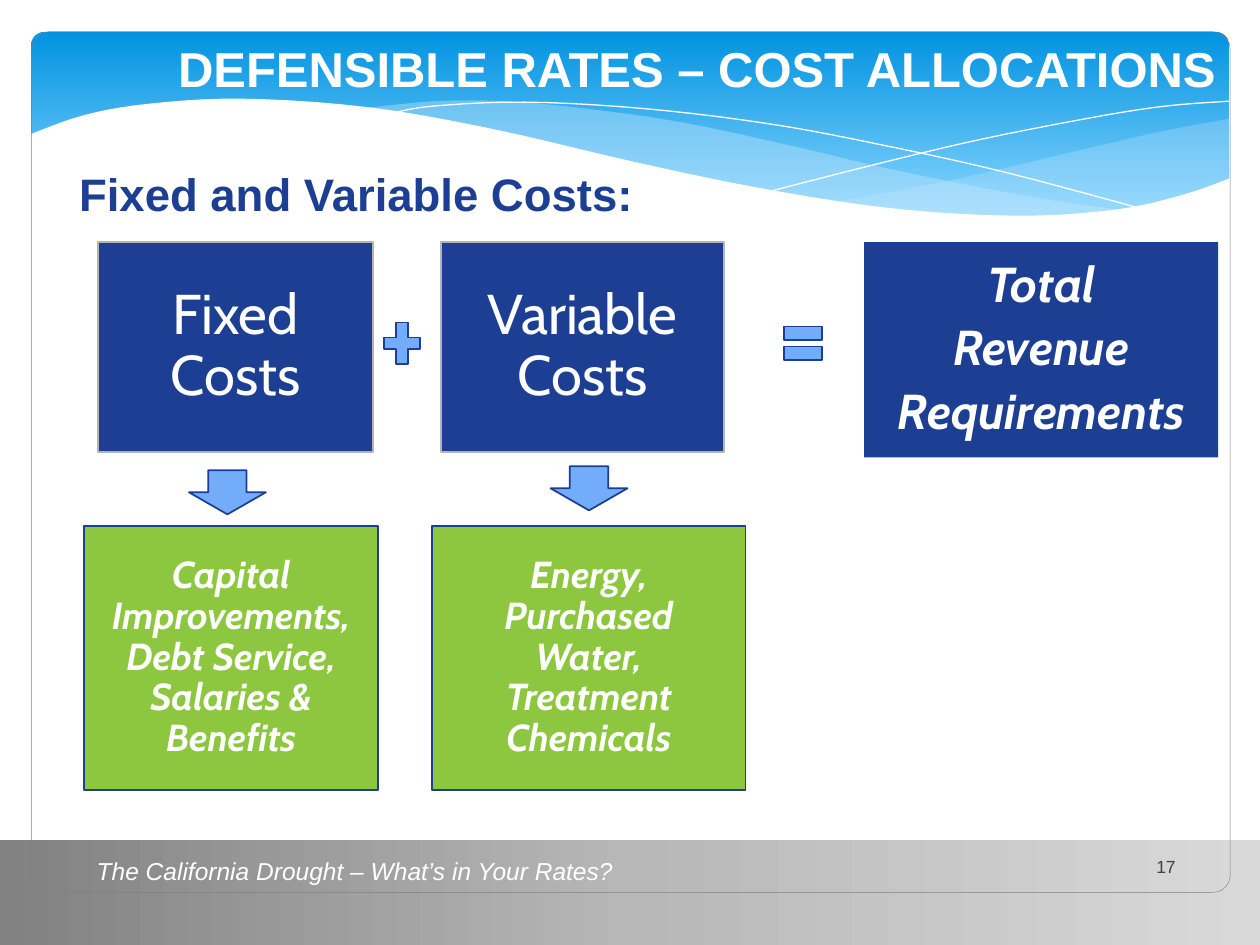
from lxml import etree
from pptx import Presentation
from pptx import util as u
from pptx.dml.color import RGBColor
from pptx.enum import shapes, text
from pptx.oxml import ns

WHITE = RGBColor(0xFF, 0xFF, 0xFF)
NAVY = RGBColor(0x1C, 0x3F, 0x94)
GREEN = RGBColor(0x8D, 0xC7, 0x3F)
SKY = RGBColor(0x73, 0xAC, 0xF8)
MIST = RGBColor(0xC6, 0xE7, 0xFC)
SILVER = RGBColor(0xB4, 0xB4, 0xB4)
GRAY = RGBColor(0x80, 0x80, 0x80)
CHARCOAL = RGBColor(0x40, 0x40, 0x40)
HEADER_STOPS = [(0, RGBColor(0x02, 0x93, 0xE0)), (90, RGBColor(0x83, 0xD3, 0xFE))]
FOOTER_STOPS = [(0, RGBColor(0x81, 0x81, 0x81)), (50, RGBColor(0xB7, 0xB7, 0xB7)),
                (100, RGBColor(0xD9, 0xD9, 0xD9))]

CREST = [(0, 2.08), (1.12, 1.68), (2.44, 1.45), (4.32, 1.35), (6.83, 1.52), (9.35, 1.96),
         (12.19, 2.62), (14.73, 3.15), (17.4, 3.56), (19.96, 3.71), (21.95, 3.58),
         (23.29, 3.28), (24.23, 2.95)]
RIGHT_RIBBON = [
    [(16.23, 3.43), (18.57, 3), (21.31, 2.36), (22.83, 2.01), (24.23, 1.75)],
    [(24.23, 2.97), (23.01, 3.38), (21.59, 3.66), (19.84, 3.73), (18.03, 3.66), (16.23, 3.43)]]
LONG_RIBBON = [
    [(6.71, 1.55), (8.18, 1.4), (9.58, 1.4), (11.23, 1.55), (13.18, 1.83), (15.42, 2.31),
     (17.37, 2.77), (19.94, 3.28), (22.12, 3.61)],
    [(22.12, 3.61), (20.73, 3.76), (19.08, 3.73), (17.09, 3.56), (14.71, 3.18),
     (11.89, 2.57), (9.7, 2.06), (8.13, 1.75), (6.71, 1.55)]]
FALLING_LINE = [(7.29, 1.65), (8.15, 1.5), (10.01, 1.42), (12.4, 1.55), (14.88, 1.85),
                (17.09, 2.26), (19.63, 2.82), (22.48, 3.58)]
RISING_LINE = [(15.01, 3.2), (17.09, 2.67), (19.15, 2.18), (21.44, 1.73), (22.91, 1.5),
               (24.21, 1.4)]


def inside(box, left, top, width, height):
    return box[0] + left, box[1] + top, width, height


def lengths(box):
    return [u.Cm(value) for value in box]


def smooth(points, steps=5):
    padded = [points[0], *points, points[-1]]
    curve = []
    for a, b, c, d in zip(padded, padded[1:], padded[2:], padded[3:]):
        for step in range(steps):
            t = step / steps
            curve.append(tuple(
                (2 * q + (r - p) * t + (2 * p - 5 * q + 4 * r - s) * t ** 2
                 + (3 * q - p - 3 * r + s) * t ** 3) / 2
                for p, q, r, s in zip(a, b, c, d)))
    return curve + [points[-1]]


def paint(shape, fill=None, line=None, width=1):
    shape.shadow.inherit = False
    if fill is None:
        shape.fill.background()
    else:
        shape.fill.solid()
        shape.fill.fore_color.rgb = fill
    if line is None:
        shape.line.fill.background()
    else:
        shape.line.color.rgb = line
        shape.line.width = u.Pt(width)


def paint_gradient(shape, stops, angle):
    paint(shape)
    shape.fill.gradient()
    shape.fill.gradient_angle = angle
    stop_list = shape.element.find(".//" + ns.qn("a:gsLst"))
    stop_list.clear()
    for position, color in stops:
        stop = etree.SubElement(stop_list, ns.qn("a:gs"), pos=str(position * 1000))
        etree.SubElement(stop, ns.qn("a:srgbClr"), val=str(color))


def add_shape(page, kind, box, fill=None, line=None, width=1):
    shape = page.shapes.add_shape(kind, *lengths(box))
    paint(shape, fill, line, width)
    return shape


def add_outline(page, box, points, closed=True):
    corners = [(u.Cm(box[0] + x), u.Cm(box[1] + y)) for x, y in points]
    builder = page.shapes.build_freeform(*corners[0])
    builder.add_line_segments(corners[1:], close=closed)
    return builder.convert_to_shape()


def add_span(para, words, size, color, font="Arial", bold=False, italic=False):
    span = para.add_run()
    span.text = words
    span.font.name = font
    span.font.size = u.Pt(size)
    span.font.color.rgb = color
    span.font.bold = bold
    span.font.italic = italic


def add_label(page, box, words, size, color, italic=False):
    label = page.shapes.add_textbox(*lengths(box))
    label.text_frame.word_wrap = True
    add_span(label.text_frame.paragraphs[0], words, size, color, italic=italic)


def fill_placeholder(holder, box, words, size, color, anchor, align):
    holder.left, holder.top, holder.width, holder.height = lengths(box)
    frame = holder.text_frame
    frame.auto_size = text.MSO_AUTO_SIZE.NONE
    frame.vertical_anchor = anchor
    para = frame.paragraphs[0]
    para.alignment = align
    para.space_before = u.Pt(0)
    add_span(para, words, size, color, bold=True)
    holder.element.getparent().append(holder.element)
    return para


def draw_header(page, box):
    banner = add_shape(page, shapes.MSO_SHAPE.ROUNDED_RECTANGLE, inside(box, 0.05, 0, 24.15, 3.96))
    banner.adjustments[0] = 0.07
    paint_gradient(banner, HEADER_STOPS, 270)
    for (upper, lower), opacity in ((RIGHT_RIBBON, 29), (LONG_RIBBON, 40)):
        ribbon = add_outline(page, box, smooth(upper) + smooth(lower))
        paint(ribbon, MIST)
        color = ribbon.element.spPr.find(".//" + ns.qn("a:srgbClr"))
        etree.SubElement(color, ns.qn("a:alpha"), val=str(opacity * 1000))
    for points in (FALLING_LINE, RISING_LINE):
        paint(add_outline(page, box, smooth(points), closed=False), line=WHITE, width=0)
    wave = add_outline(page, box, smooth(CREST) + [(box[2], box[3]), (0, box[3])])
    paint(wave, WHITE)


def draw_footer(page, box):
    bar = add_shape(page, shapes.MSO_SHAPE.RECTANGLE, box)
    paint_gradient(bar, FOOTER_STOPS, 0)
    add_label(page, inside(box, 23.06, 0.2, 1.27, 0.69), "17", 10, CHARCOAL)
    add_label(page, inside(box, 1.7, 0.2, 11.63, 0.86),
              "The California Drought – What’s in Your Rates?", 14, WHITE, italic=True)


def draw_frame(page, box):
    frame = add_shape(page, shapes.MSO_SHAPE.ROUNDED_RECTANGLE, box, line=GRAY, width=0.25)
    frame.adjustments[0] = 0.02


def draw_card(page, box, lines, size, fill, line, inset, emphasis, width=1):
    card = add_shape(page, shapes.MSO_SHAPE.RECTANGLE, box, fill, line, width)
    frame = card.text_frame
    frame.word_wrap = True
    frame.vertical_anchor = text.MSO_ANCHOR.MIDDLE
    frame.margin_left = frame.margin_right = u.Cm(inset)
    frame.margin_top = frame.margin_bottom = u.Cm(inset)
    for index, words in enumerate(lines):
        para = frame.add_paragraph() if index else frame.paragraphs[0]
        para.alignment = text.PP_ALIGN.CENTER
        para.line_spacing = 0.9
        para.space_after = u.Pt(6)
        add_span(para, words, size, WHITE, "Cabin", emphasis, emphasis)


def draw_equation(page, box):
    draw_card(page, inside(box, 15.72, 0, 7.14, 4.34), ["Total", "Revenue", "Requirements"],
              28, NAVY, None, 0.3, True)
    for left, width, words in ((0.28, 5.54, "Fixed Costs"), (7.19, 5.71, "Variable Costs")):
        draw_card(page, inside(box, left, 0, width, 4.23), [words],
                  32, NAVY, SILVER, 0.46, False, 1.25)
    for left, width, words in (
            (0, 5.92, "Capital Improvements, Debt Service, Salaries & Benefits"),
            (7.01, 6.32, "Energy, Purchased Water, Treatment Chemicals")):
        draw_card(page, inside(box, left, 5.72, width, 5.33), [words],
                  21.5, GREEN, NAVY, 0.51, True)
    for kind, *place in (
            (shapes.MSO_SHAPE.MATH_PLUS, 5.92, 1.47, 0.97, 1.14),
            (shapes.MSO_SHAPE.MATH_EQUAL, 13.97, 1.47, 1.04, 1.14),
            (shapes.MSO_SHAPE.DOWN_ARROW, 2.11, 4.6, 1.55, 0.89),
            (shapes.MSO_SHAPE.DOWN_ARROW, 9.4, 4.52, 1.55, 0.89)):
        add_shape(page, kind, inside(box, *place), SKY, NAVY)


def write_headings(page, box):
    fill_placeholder(page.shapes.title, inside(box, 0.89, 0, 23.29, 1.45),
                     "DEFENSIBLE RATES – COST ALLOCATIONS", 28, WHITE,
                     text.MSO_ANCHOR.BOTTOM, text.PP_ALIGN.RIGHT)
    para = fill_placeholder(page.placeholders[1], inside(box, 0.26, 2.48, 23.42, 1.57),
                            "Fixed and Variable Costs:", 26, NAVY,
                            text.MSO_ANCHOR.MIDDLE, text.PP_ALIGN.LEFT)
    layout = para._p.get_or_add_pPr()
    layout.set("marL", str(u.Cm(0.5)))
    layout.set("indent", "0")
    etree.SubElement(layout, ns.qn("a:buNone"))


def main():
    deck = Presentation()
    deck.slide_width, deck.slide_height = u.Cm(25.4), u.Cm(19.05)
    page = deck.slides.add_slide(deck.slide_layouts[1])
    header = (0.58, 0.64, 24.23, 5.05)
    draw_header(page, header)
    draw_footer(page, (0, 16.94, 25.4, 2.11))
    draw_frame(page, (0.64, 0.64, 24.16, 17.35))
    draw_equation(page, (1.7, 4.88, 22.86, 11.05))
    write_headings(page, header)
    deck.save("out.pptx")


if __name__ == "__main__":
    main()
